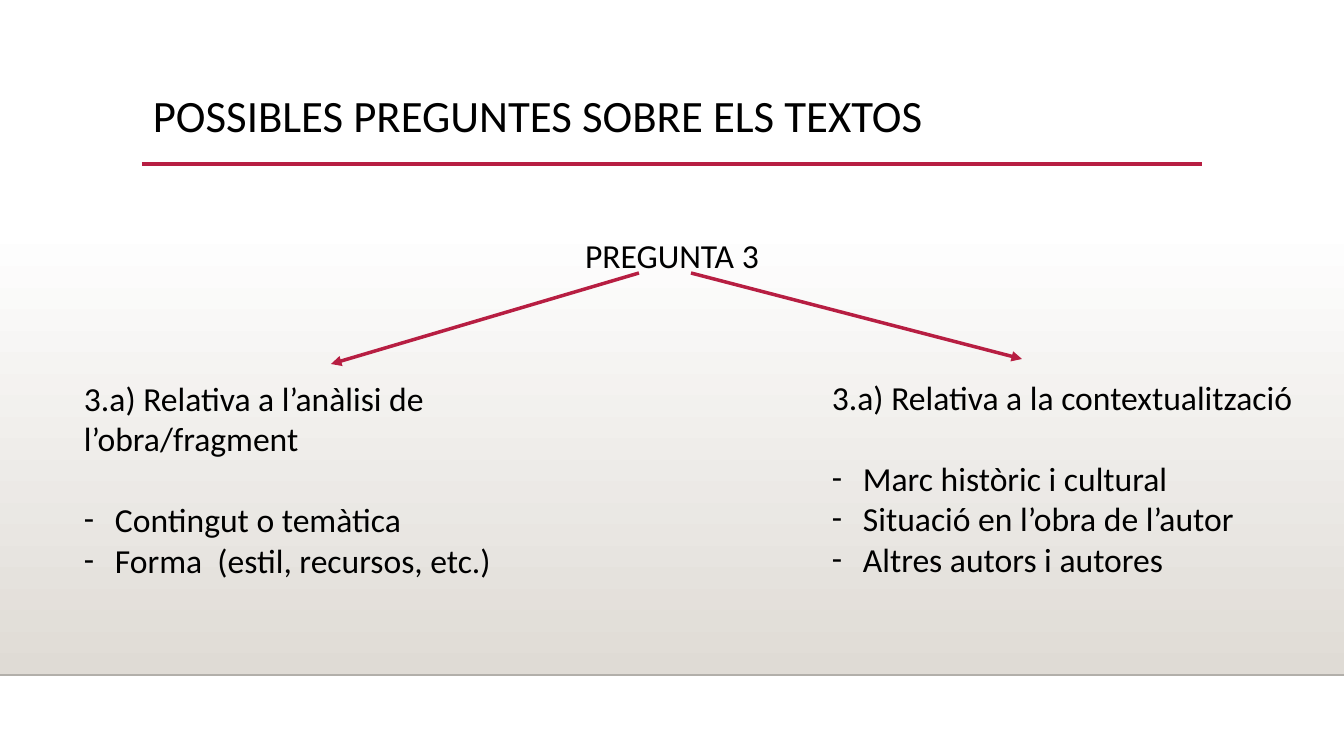
from lxml import etree
from pptx import Presentation
from pptx.dml.color import RGBColor
from pptx.enum.shapes import MSO_CONNECTOR, MSO_SHAPE
from pptx.enum.text import MSO_ANCHOR, PP_ALIGN
from pptx.oxml.ns import qn
from pptx.util import Emu, Pt

STRAIGHT = MSO_CONNECTOR.STRAIGHT
RECTANGLE = MSO_SHAPE.RECTANGLE
TOP = MSO_ANCHOR.TOP
LEFT, CENTER = PP_ALIGN.LEFT, PP_ALIGN.CENTER

WIDTH, HEIGHT = 1344, 756
FLOOR = 675
BULLET_INDENT = 31


def px(length):
    return Emu(round(length * 914400 / 100.8))


def colour(value):
    return RGBColor.from_string(value)


class SlideBuilder:
    font = "Calibri"
    ink = "000000"
    accent = "B71E42"
    body_size = 24

    def __init__(self, presentation):
        self.slide = presentation.slides.add_slide(presentation.slide_layouts[6])

    def gradient(self, left, top, width, height, start, end):
        shape = self.slide.shapes.add_shape(
            RECTANGLE, px(left), px(top), px(width), px(height))
        shape.shadow.inherit = False
        shape.line.fill.background()
        shape.fill.gradient()
        shape.fill.gradient_angle = 270
        for stop, value in zip(shape.fill.gradient_stops, (start, end)):
            stop.color.rgb = colour(value)

    def line(self, start, end, value=accent, weight=2.5, arrow=False):
        connector = self.slide.shapes.add_connector(
            STRAIGHT, *(px(length) for length in start + end))
        connector.line.color.rgb = colour(value)
        connector.line.width = Pt(weight)
        if arrow:
            outline = connector.line._get_or_add_ln()
            etree.SubElement(outline, qn("a:tailEnd"), type="triangle")
        etree.SubElement(connector._element.spPr, qn("a:effectLst"))

    def text(self, left, top, width, height, lines, size=body_size,
             align=LEFT, spacing=None):
        box = self.slide.shapes.add_textbox(px(left), px(top), px(width), px(height))
        text_frame = box.text_frame
        text_frame.word_wrap = True
        text_frame.vertical_anchor = TOP
        text_frame.text = "\n".join(lines)
        for paragraph in text_frame.paragraphs:
            paragraph.alignment = align
            if spacing:
                paragraph.line_spacing = spacing
            for run in paragraph.runs:
                run.font.name = self.font
                run.font.size = Pt(size)
                run.font.color.rgb = colour(self.ink)
        return text_frame

    def question(self, left, top, width, height, heading, topics):
        text_frame = self.text(left, top, width, height, [heading] + topics)
        for paragraph in text_frame.paragraphs[1:]:
            properties = paragraph._p.get_or_add_pPr()
            properties.set("marL", str(px(BULLET_INDENT)))
            properties.set("indent", str(-px(BULLET_INDENT)))
            etree.SubElement(properties, qn("a:buFont"), typeface=self.font)
            etree.SubElement(properties, qn("a:buChar"), char="-")
        # One empty line's height separates the heading from its topics
        text_frame.paragraphs[1].space_before = Pt(29)


def main():
    presentation = Presentation()
    presentation.slide_width, presentation.slide_height = px(WIDTH), px(HEIGHT)
    builder = SlideBuilder(presentation)

    # Backdrop
    builder.gradient(0, 223, WIDTH, FLOOR - 223, "FFFFFF", "DFDBD5")
    builder.line((0, FLOOR), (WIDTH, FLOOR), "B2AFAA", 1)

    # Title and its rule
    builder.line((142, 164), (1202, 164))
    builder.text(143, 89, 1058, 116, ["POSSIBLES PREGUNTES SOBRE ELS TEXTOS"],
                 size=32, spacing=0.9)

    # Question branching into two parts
    builder.text(143, 222, 1058, 380, ["PREGUNTA 3"], align=CENTER, spacing=1.2)
    builder.line((639, 273), (331, 364), arrow=True)
    builder.line((691, 273), (1022, 359), arrow=True)

    # The two parts
    builder.question(74, 373, 560, 214, "3.a) Relativa a l’anàlisi de l’obra/fragment",
                     ["Contingut o temàtica", "Forma  (estil, recursos, etc.)"])
    builder.question(822, 372, 485, 214, "3.a) Relativa a la contextualització",
                     ["Marc històric i cultural", "Situació en l’obra de l’autor",
                      "Altres autors i autores"])

    presentation.save("out.pptx")


if __name__ == "__main__":
    main()
